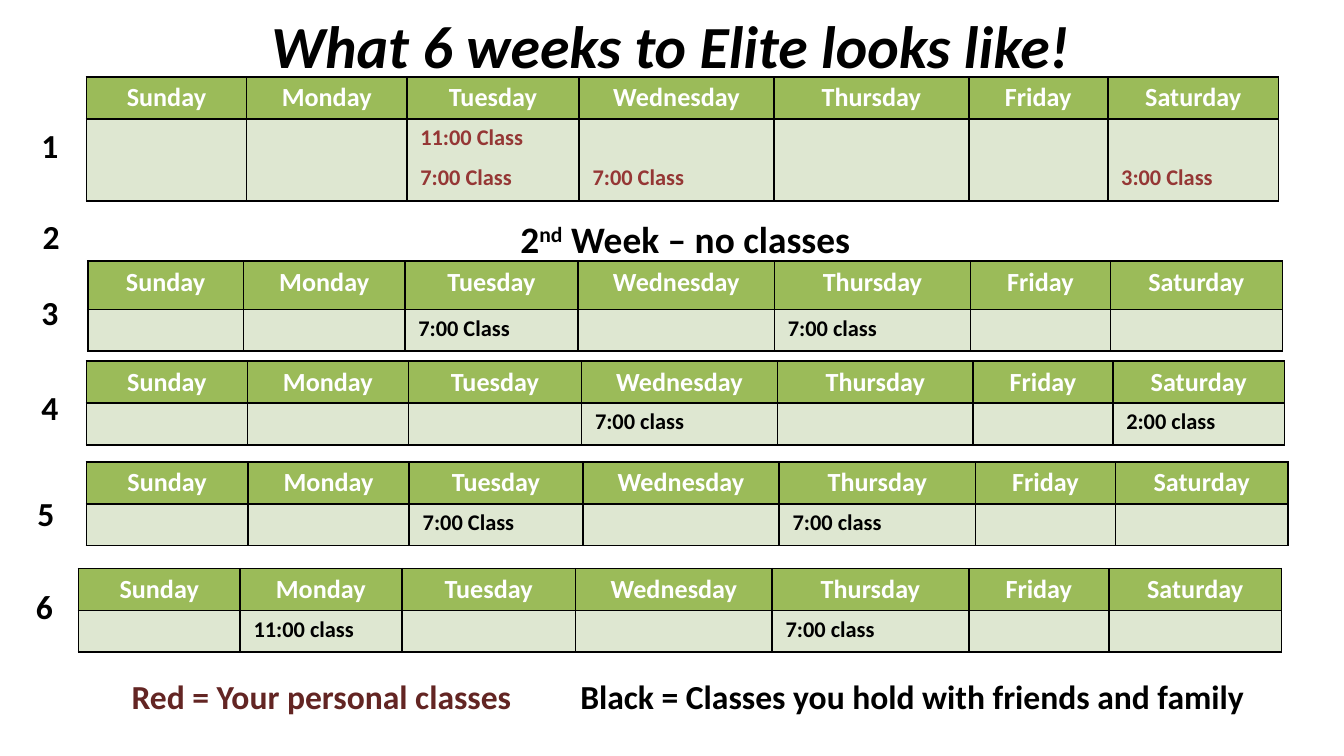
import dataclasses
import typing

import lxml.etree
import pptx
import pptx.dml.color
import pptx.enum.text
import pptx.oxml.ns
import pptx.util

Pt = pptx.util.Pt
qn = pptx.oxml.ns.qn
ALIGN = pptx.enum.text.PP_ALIGN
ANCHOR = pptx.enum.text.MSO_ANCHOR

FONT = "Calibri"
COLORS = {
    "black": "000000",
    "white": "FFFFFF",
    "personal": "953735",
    "legend_red": "632523",
    "header": "9BBB59",
    "body": "DEE7D1",
}
DAYS = ["Sunday", "Monday", "Tuesday", "Wednesday", "Thursday", "Friday", "Saturday"]
DAY_WIDTHS = [86.4, 86.4, 92.9, 105.1, 105.1, 74.9, 92.2]


@dataclasses.dataclass
class Week:
    left: float
    top: float
    width: float
    classes: dict[str, str]
    header_height: float = 22.5
    class_height: float = 22.3
    class_color: str = "black"
    sunday_width: float = DAY_WIDTHS[0]


@dataclasses.dataclass
class Label:
    text: str
    left: float
    top: float
    width: float
    height: float = 29
    size: float = 18
    align: typing.Any = ALIGN.LEFT


WEEKS = [
    Week(46.3, 41.3, 638.8,
         {"Tuesday": "11:00 Class\n7:00 Class", "Wednesday": "7:00 Class",
          "Saturday": "3:00 Class"},
         class_height=43.9, class_color="personal"),
    Week(47, 139.9, 640.1, {"Tuesday": "7:00 Class", "Thursday": "7:00 class"},
         header_height=25.9, sunday_width=83.5),
    Week(46.3, 193.5, 642, {"Wednesday": "7:00 class", "Saturday": "2:00 class"}),
    Week(46.3, 247.5, 643.7, {"Tuesday": "7:00 Class", "Thursday": "7:00 class"}),
    Week(42, 304.6, 644.6, {"Monday": "11:00 class", "Thursday": "7:00 class"}),
]
WEEK_NUMBERS = [
    Label("1", 15.1, 63.4, 23.8),
    Label("2", 15.8, 112.3, 18),
    Label("3", 15.1, 152.9, 23.8),
    Label("4", 15.1, 203.8, 18),
    Label("5", 13, 260.6, 23.8),
    Label("6", 12.2, 310.3, 34.6),
]
NO_CLASSES = Label("", 46.1, 112.3, 642.2, 31.7, 20, ALIGN.CENTER)
LEGEND = Label("", 63.4, 358.6, 620)
LEGEND_TAB = 240.4


def format_font(span: typing.Any, size: float, color: str, italic: bool = False) -> None:
    span.font.name = FONT
    span.font.size = Pt(size)
    span.font.bold = True
    span.font.italic = italic
    span.font.color.rgb = pptx.dml.color.RGBColor.from_string(COLORS[color])


def add_label(page: typing.Any, label: Label) -> typing.Any:
    box = page.shapes.add_textbox(
        Pt(label.left), Pt(label.top), Pt(label.width), Pt(label.height))
    box.text_frame.word_wrap = True
    box.text_frame.text = label.text
    para = box.text_frame.paragraphs[0]
    para.alignment = label.align
    for span in para.runs:
        format_font(span, label.size, "black")
    return para


def add_span(para: typing.Any, text: str, size: float, color: str) -> typing.Any:
    span = para.add_run()
    span.text = text
    format_font(span, size, color)
    return span


def add_borders(cell: typing.Any) -> None:
    properties = cell._tc.get_or_add_tcPr()
    for side in ("a:lnL", "a:lnR", "a:lnT", "a:lnB"):
        line = lxml.etree.SubElement(properties, qn(side), w=str(Pt(1)))
        fill = lxml.etree.SubElement(line, qn("a:solidFill"))
        lxml.etree.SubElement(fill, qn("a:srgbClr"), val=COLORS["black"])


def fill_cell(cell: typing.Any, text: str, size: float, color: str, fill: str) -> None:
    add_borders(cell)
    cell.fill.solid()
    cell.fill.fore_color.rgb = pptx.dml.color.RGBColor.from_string(COLORS[fill])
    cell.margin_top = cell.margin_bottom = Pt(2.7)
    cell.text_frame.text = text
    for para in cell.text_frame.paragraphs:
        for span in para.runs:
            format_font(span, size, color)
        if not para.runs:
            lxml.etree.SubElement(para._p, qn("a:endParaRPr"), sz=str(size * 100))


def add_week(page: typing.Any, week: Week) -> None:
    widths = [week.sunday_width] + DAY_WIDTHS[1:]
    scale = week.width / sum(widths)
    table = page.shapes.add_table(
        2, len(DAYS), Pt(week.left), Pt(week.top), Pt(week.width),
        Pt(week.header_height + week.class_height)).table
    table.rows[0].height = Pt(week.header_height)
    table.rows[1].height = Pt(week.class_height)
    for index, (day, width) in enumerate(zip(DAYS, widths)):
        table.columns[index].width = Pt(width * scale)
        header = table.cell(0, index)
        fill_cell(header, day, 14, "white", "header")
        header.text_frame.paragraphs[0].alignment = ALIGN.CENTER
        slot = table.cell(1, index)
        fill_cell(slot, week.classes.get(day, ""), 12, week.class_color, "body")
        slot.vertical_anchor = ANCHOR.BOTTOM
        slot.margin_bottom = Pt(4.8)
        for para in slot.text_frame.paragraphs[1:]:
            para.space_before = Pt(7)


def add_title(page: typing.Any) -> None:
    title = page.shapes.title
    title.left, title.top, title.width, title.height = Pt(32.4), Pt(0), Pt(653.8), Pt(47.5)
    title.text_frame.text = "What 6 weeks to Elite looks like!"
    title.text_frame.vertical_anchor = ANCHOR.MIDDLE
    para = title.text_frame.paragraphs[0]
    para.alignment = ALIGN.CENTER
    format_font(para.runs[0], 32, "black", italic=True)
    subtitle = page.placeholders[1].element
    subtitle.getparent().remove(subtitle)


def add_legend(page: typing.Any) -> None:
    para = add_label(page, LEGEND)
    tabs = lxml.etree.SubElement(para._p.get_or_add_pPr(), qn("a:tabLst"))
    lxml.etree.SubElement(tabs, qn("a:tab"), pos=str(Pt(LEGEND_TAB)), algn="l")
    add_span(para, "Red = Your personal classes\t", LEGEND.size, "legend_red")
    add_span(para, "Black = Classes you hold with friends and family", LEGEND.size, "black")


def main() -> None:
    deck = pptx.Presentation()
    deck.slide_width, deck.slide_height = Pt(720), Pt(405)
    page = deck.slides.add_slide(deck.slide_layouts[0])
    add_title(page)
    for week in WEEKS:
        add_week(page, week)
    para = add_label(page, NO_CLASSES)
    add_span(para, "2", NO_CLASSES.size, "black")
    ordinal = add_span(para, "nd", NO_CLASSES.size, "black")
    ordinal.font._element.set("baseline", "30000")
    add_span(para, " Week – no classes", NO_CLASSES.size, "black")
    for number in WEEK_NUMBERS:
        add_label(page, number)
    add_legend(page)
    deck.save("out.pptx")


if __name__ == "__main__":
    main()
